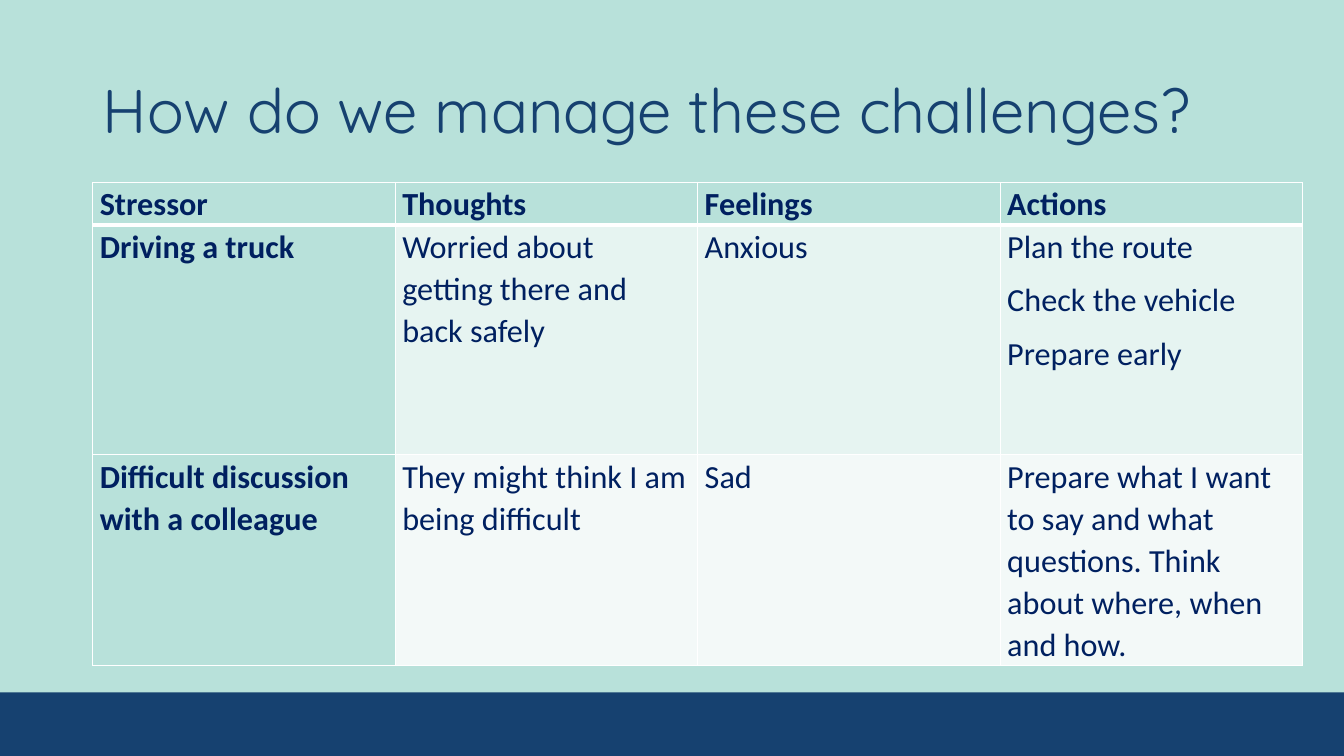
from lxml.etree import SubElement
from pptx import Presentation
from pptx.dml.color import RGBColor
from pptx.enum.shapes import MSO_SHAPE
from pptx.enum.text import MSO_ANCHOR, PP_ALIGN
from pptx.oxml import parse_xml
from pptx.oxml.ns import nsdecls, qn
from pptx.util import Inches, Pt

MINT = "B8E1DA"
BLUE = "164170"
NAVY = "002060"
WHITE = "FFFFFF"
ROW_FILLS = [MINT, "E6F4F1", "F3F9F8"]
ROW_HEIGHTS = [0.4, 2.28, 2.05]
ROWS = [
    [["Stressor"], ["Thoughts"], ["Feelings"], ["Actions"]],
    [["Driving a truck"],
     ["Worried about getting there and back safely"],
     ["Anxious"],
     ["Plan the route", "Check the vehicle", "Prepare early"]],
    [["Difficult discussion with a colleague"],
     ["They might think I am being difficult"],
     ["Sad"],
     ["Prepare what I want to say and what questions. "
      "Think about where, when and how."]],
]


def paint(target, color):
    target.solid()
    target.fore_color.rgb = RGBColor.from_string(color)


def add_span(para, text, font_name, size, color, bold=False):
    span = para.add_run()
    span.text = text
    span.font.name = font_name
    span.font.size = Pt(size)
    span.font.bold = bold
    span.font.color.rgb = RGBColor.from_string(color)


def set_borders(cell, widths):
    """Draw white cell borders; widths are points for left, right, top, bottom."""
    properties = cell._tc.get_or_add_tcPr()
    for index, (side, width) in enumerate(zip("LRTB", widths)):
        line = parse_xml(f'<a:ln{side} {nsdecls("a")} w="{Pt(width)}"/>')
        fill = SubElement(line, qn("a:solidFill"))
        SubElement(fill, qn("a:srgbClr")).set("val", WHITE)
        properties.insert(index, line)


def add_footer_band(page, left, top, width, height):
    band = page.shapes.add_shape(MSO_SHAPE.RECTANGLE, Inches(left), Inches(top),
                                 Inches(width), Inches(height))
    band.shadow.inherit = False
    paint(band.fill, BLUE)
    band.line.fill.background()


def place_title(page, left, top, width, height):
    box = page.shapes.title
    box.left, box.top = Inches(left), Inches(top)
    box.width, box.height = Inches(width), Inches(height)
    frame = box.text_frame
    frame.word_wrap = True
    frame.vertical_anchor = MSO_ANCHOR.MIDDLE
    para = frame.paragraphs[0]
    para.alignment = PP_ALIGN.LEFT
    para.line_spacing = 0.9
    add_span(para, "How do we manage these challenges?", "Quicksand", 44, BLUE)


def fill_cell(cell, lines, bold):
    cell.margin_left = cell.margin_right = Inches(0.07)
    cell.margin_top = cell.margin_bottom = 0
    frame = cell.text_frame
    for index, text in enumerate(lines):
        para = frame.add_paragraph() if index else frame.paragraphs[0]
        para.line_spacing = 1.07
        para.space_after = Pt(8)
        add_span(para, text, "Calibri", 23, NAVY, bold)


def add_challenge_table(page, left, top, width, height):
    table = page.shapes.add_table(len(ROWS), len(ROWS[0]), Inches(left), Inches(top),
                                  Inches(width), Inches(height)).table
    table.first_col = True
    table.horz_banding = False
    for column in table.columns:
        column.width = Inches(width / len(ROWS[0]))
    for row_index, row in enumerate(ROWS):
        table.rows[row_index].height = Inches(ROW_HEIGHTS[row_index])
        for column_index, lines in enumerate(row):
            cell = table.cell(row_index, column_index)
            is_label = row_index == 0 or column_index == 0
            fill_cell(cell, lines, is_label)
            paint(cell.fill, MINT if is_label else ROW_FILLS[row_index])
            above = 3 if row_index == 1 else 1
            below = 3 if row_index == 0 else 1
            set_borders(cell, [1, 1, above, below])


def main():
    deck = Presentation()
    deck.slide_width, deck.slide_height = Inches(13.33), Inches(7.5)
    page = deck.slides.add_slide(deck.slide_layouts[5])
    paint(page.background.fill, MINT)
    add_footer_band(page, 0, 6.87, 13.33, 0.63)
    place_title(page, 0.92, 0.4, 11.81, 1.46)
    add_challenge_table(page, 0.92, 1.81, 12, sum(ROW_HEIGHTS))
    deck.save("out.pptx")


if __name__ == "__main__":
    main()
